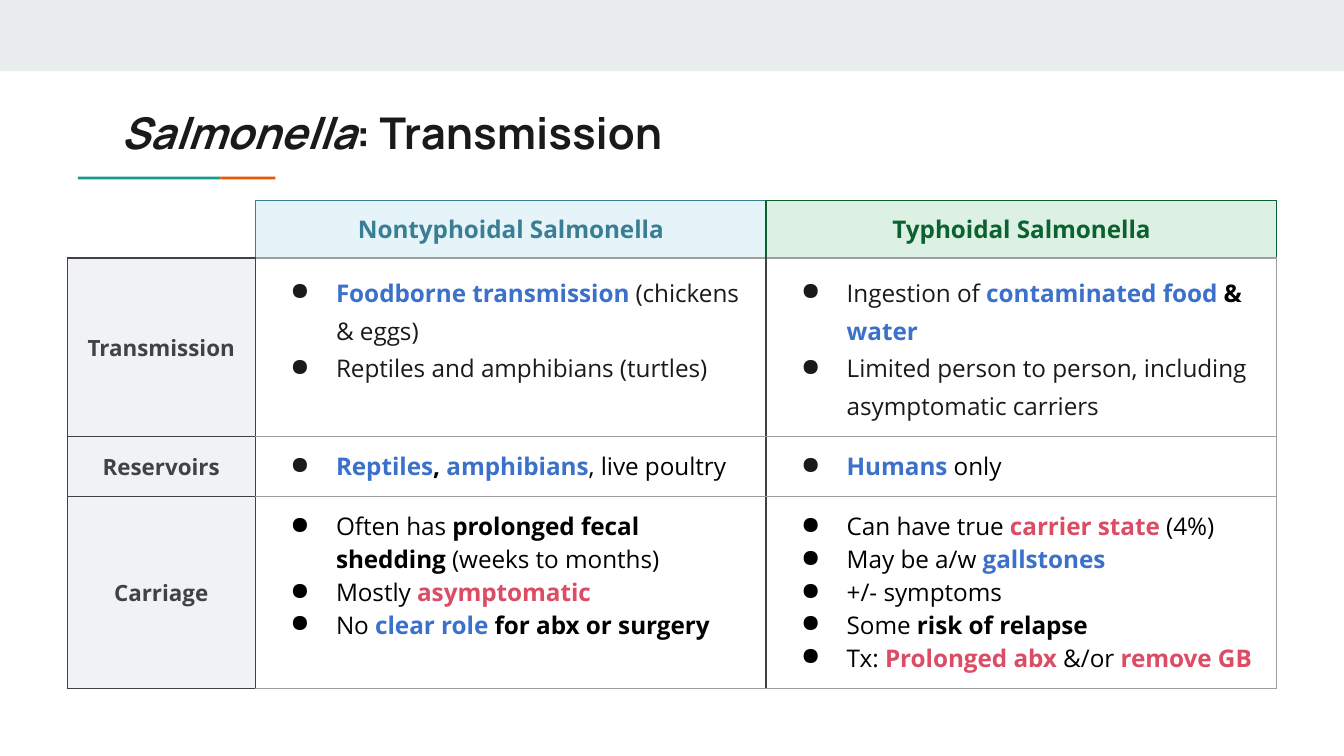
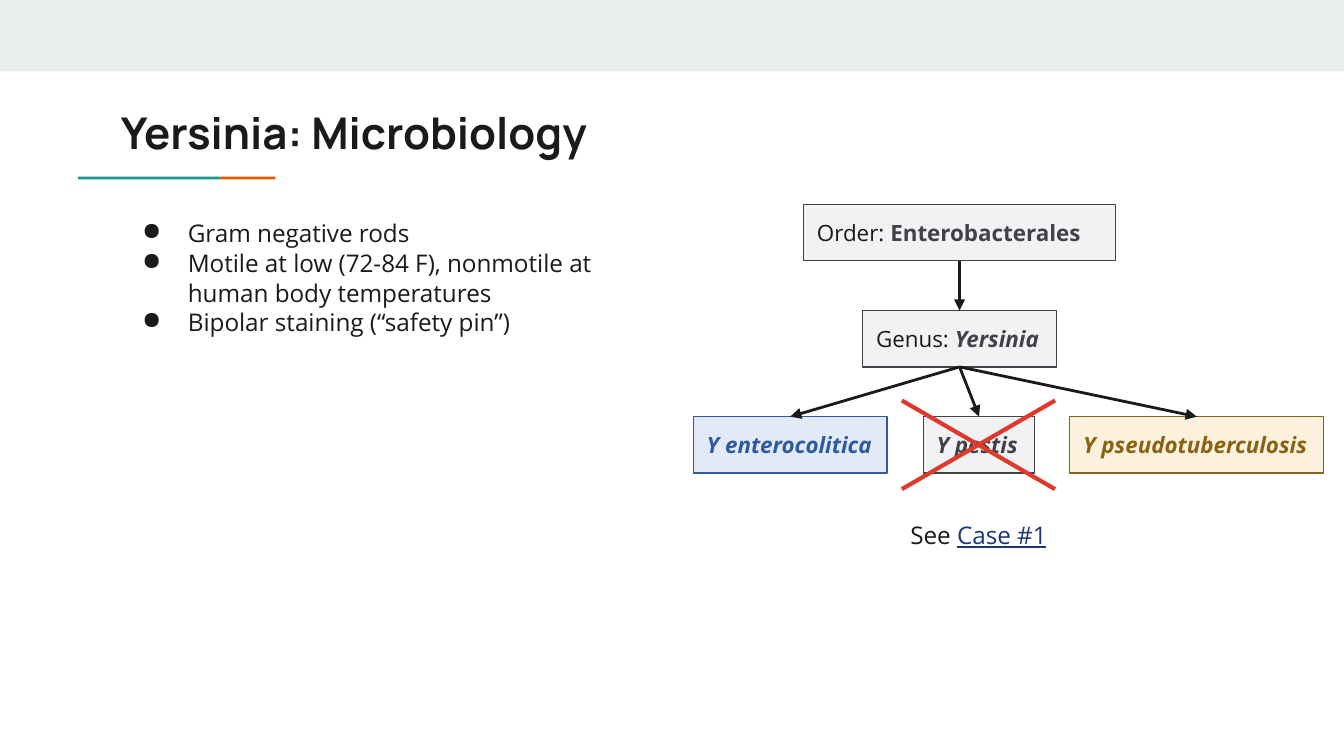
from dataclasses import dataclass

import pptx
import pptx.dml.color
import pptx.enum.shapes
import pptx.enum.text
import pptx.oxml
import pptx.oxml.ns
import pptx.util
from lxml import etree

ALIGN = pptx.enum.text.PP_ALIGN
ANCHOR = pptx.enum.text.MSO_ANCHOR
RECTANGLE = pptx.enum.shapes.MSO_SHAPE.RECTANGLE
STRAIGHT = pptx.enum.shapes.MSO_CONNECTOR.STRAIGHT
TOP_SIDE, BOTTOM_SIDE = 0, 2


@dataclass(frozen=True)
class Theme:
    """Colours, fonts and sizes shared by the slides."""
    ink: str = "1A1A1A"
    black: str = "000000"
    band: str = "E9EDEE"
    teal: str = "1A9988"
    orange: str = "EB5600"
    slate: str = "404247"
    grey_fill: str = "F1F2F3"
    rule: str = "9E9E9E"
    key: str = "3B71CA"
    alert: str = "DC4C64"
    cross: str = "DF382C"
    reference: str = "1C3678"
    cyan: tuple = ("E5F4F8", "3B7E94")
    green: tuple = ("DCF1E4", "0C622E")
    blue: tuple = ("E2EAF7", "2F5AA2")
    amber: tuple = ("FBF1DD", "896110")
    title_font: str = "Manrope"
    body_font: str = "Open Sans"
    title_size: float = 23.4
    body_size: float = 13
    label_size: float = 12
    hairline: float = 0.75


THEME = Theme()
GREY = (THEME.grey_fill, THEME.slate)


def grid(units):
    """Convert grid units, a hundredth of the slide width each, to a length."""
    return pptx.util.Inches(units / 10)


@dataclass(frozen=True)
class Box:
    """A rectangle in grid units."""
    left: float
    top: float
    width: float
    height: float

    def area(self, left, top, width, height):
        """Return a box placed relative to this one."""
        return Box(self.left + left, self.top + top, width, height)

    def lengths(self):
        """Return left, top, width and height as lengths."""
        return [grid(value) for value in (self.left, self.top, self.width, self.height)]


PAGE = Box(0, 0, 100, 56.25)


@dataclass(frozen=True)
class Span:
    """A stretch of text in one style."""
    text: str
    color: str = THEME.ink
    bold: bool = False
    italic: bool = False
    underline: bool = False


def plain(text):
    """Return a black span."""
    return Span(text, THEME.black)


def strong(text):
    """Return a bold black span."""
    return Span(text, THEME.black, True)


def key(text):
    """Return a bold blue span."""
    return Span(text, THEME.key, True)


def alert(text):
    """Return a bold red span."""
    return Span(text, THEME.alert, True)


def rgb(color):
    """Return a colour object for a hexadecimal string."""
    return pptx.dml.color.RGBColor.from_string(color)


def child(parent, tag, **attributes):
    """Append a drawing element to a parent."""
    return etree.SubElement(parent, pptx.oxml.ns.qn(tag), attributes)


def add_bullet(para, color):
    """Give a paragraph a hanging round bullet."""
    properties = para._p.get_or_add_pPr()
    properties.set("marL", str(grid(5)))
    properties.set("indent", str(grid(-3.4)))
    child(child(properties, "a:buClr"), "a:srgbClr", val=color)
    child(properties, "a:buChar", char="●")


def write(frame, lines, size, font=THEME.body_font, align=ALIGN.LEFT,
          bullets=False, spacing=1.0):
    """Fill a text frame with paragraphs made of spans."""
    frame.word_wrap = True
    for index, spans in enumerate(lines):
        para = frame.paragraphs[0] if index == 0 else frame.add_paragraph()
        if bullets:
            add_bullet(para, spans[0].color if spans[0].color == THEME.black else THEME.ink)
        para.alignment = align
        para.line_spacing = spacing
        para.space_before = para.space_after = pptx.util.Pt(0)
        para.font.name = font
        para.font.size = pptx.util.Pt(size)
        for span in spans:
            run = para.add_run()
            run.text = span.text
            run.font.color.rgb = rgb(span.color)
            run.font.bold = span.bold
            run.font.italic = span.italic
            run.font.underline = span.underline


def set_margins(holder):
    """Set equal inner margins on a text frame or table cell."""
    holder.margin_left = holder.margin_right = grid(1)
    holder.margin_top = holder.margin_bottom = grid(1)


def add_rectangle(page, box, fill, line=None):
    """Draw a flat rectangle."""
    shape = page.shapes.add_shape(RECTANGLE, *box.lengths())
    shape.shadow.inherit = False
    shape.fill.solid()
    shape.fill.fore_color.rgb = rgb(fill)
    if line:
        shape.line.color.rgb = rgb(line)
        shape.line.width = pptx.util.Pt(THEME.hairline)
    else:
        shape.line.fill.background()
    return shape


def add_label(page, box, colors, spans, size=THEME.label_size, align=ALIGN.LEFT):
    """Draw an outlined rectangle with one line of text."""
    shape = add_rectangle(page, box, *colors)
    set_margins(shape.text_frame)
    shape.text_frame.vertical_anchor = ANCHOR.MIDDLE
    write(shape.text_frame, [spans], size, align=align)
    return shape


def add_text(page, box, lines, **style):
    """Add a text box."""
    frame = page.shapes.add_textbox(*box.lengths()).text_frame
    set_margins(frame)
    write(frame, lines, THEME.body_size, **style)


def add_line(page, start, end, color, width):
    """Draw a straight line between two grid points."""
    line = page.shapes.add_connector(STRAIGHT, *map(grid, start + end))
    line.line.color.rgb = rgb(color)
    line.line.width = pptx.util.Pt(width)
    child(line._element.spPr, "a:effectLst")
    return line


def add_arrow(page, parent, branch):
    """Join the bottom of one label to the top of another."""
    arrow = add_line(page, (0, 0), (0, 0), THEME.ink, 1.5)
    arrow.begin_connect(parent, BOTTOM_SIDE)
    arrow.end_connect(branch, TOP_SIDE)
    child(arrow.line._get_or_add_ln(), "a:tailEnd", type="triangle")


def add_page(deck, title):
    """Add a slide with the top band, title and accent rule."""
    page = deck.slides.add_slide(deck.slide_layouts[5])
    add_rectangle(page, PAGE.area(0, 0, PAGE.width, 5.3), THEME.band)
    add_rectangle(page, PAGE.area(5.8, 13.15, 10.6, 0.2), THEME.teal)
    add_rectangle(page, PAGE.area(16.4, 13.15, 4.1, 0.2), THEME.orange)
    holder = page.shapes.title
    holder.left, holder.top, holder.width, holder.height = PAGE.area(8, 6.9, 84.1, 5.9).lengths()
    set_margins(holder.text_frame)
    holder.text_frame.vertical_anchor = ANCHOR.TOP
    holder.text_frame.auto_size = pptx.enum.text.MSO_AUTO_SIZE.NONE
    write(holder.text_frame, [title], THEME.title_size, THEME.title_font)
    return page


def set_borders(cell, left, right, top, bottom):
    """Colour the four edges of a cell."""
    properties = cell._tc.get_or_add_tcPr()
    edges = {"a:lnL": left, "a:lnR": right, "a:lnT": top, "a:lnB": bottom}
    for tag, color in edges.items():
        edge = child(properties, tag, w=str(pptx.util.Pt(THEME.hairline)))
        child(child(edge, "a:solidFill"), "a:srgbClr", val=color)


def comparison_table(page, box, headings, rows):
    """Draw two column headings above a table with row labels."""
    label_width, heading_height = 14, 4.3
    column_width = (box.width - label_width) / len(headings)
    for index, (text, colors) in enumerate(headings):
        place = box.area(label_width + index * column_width, 0, column_width, heading_height)
        add_label(page, place, colors, [Span(text, colors[1], True)], THEME.body_size, ALIGN.CENTER)
    body = box.area(0, heading_height, box.width, box.height - heading_height)
    table = page.shapes.add_table(len(rows), len(headings) + 1, *body.lengths()).table
    table.first_row = table.horz_banding = False
    for column, width in zip(table.columns, [label_width] + [column_width] * len(headings)):
        column.width = grid(width)
    for row_index, (name, height, spacing, contents) in enumerate(rows):
        table.rows[row_index].height = grid(height)
        label = table.cell(row_index, 0)
        set_margins(label)
        set_borders(label, *[THEME.slate] * 4)
        label.fill.solid()
        label.fill.fore_color.rgb = rgb(THEME.grey_fill)
        label.vertical_anchor = ANCHOR.MIDDLE
        write(label.text_frame, [[Span(name, THEME.slate, True)]], THEME.label_size, align=ALIGN.CENTER)
        for index, lines in enumerate(contents, 1):
            cell = table.cell(row_index, index)
            set_margins(cell)
            right = THEME.rule if index == len(contents) else THEME.slate
            set_borders(cell, THEME.slate, right, THEME.rule, THEME.rule)
            cell.fill.background()
            write(cell.text_frame, lines, THEME.body_size, bullets=True, spacing=spacing)


def taxonomy_tree(page, box):
    """Draw order, genus and species labels joined by arrows."""
    step, height = 7.9, 4.2
    order = add_label(page, box.area(8.2, 0, 23.2, height), GREY,
                      [Span("Order: "), Span("Enterobacterales", THEME.slate, True)])
    genus = add_label(page, box.area(12.6, step, 14.4, height), GREY,
                      [Span("Genus: "), Span("Yersinia", THEME.slate, True, True)])
    species = [("Y pestis", 17.1, 8.3, GREY),
               ("Y enterocolitica", 0, 14.4, THEME.blue),
               ("Y pseudotuberculosis", 28, 18.9, THEME.amber)]
    branches = [add_label(page, box.area(left, 2 * step, width, height), colors,
                          [Span(name, colors[1], True, True)])
                for name, left, width, colors in species]
    add_arrow(page, order, genus)
    for branch in branches:
        add_arrow(page, genus, branch)
    cross = box.area(15.5, 2 * step - 1.2, 11.4, 6.6)
    right, bottom = cross.left + cross.width, cross.top + cross.height
    add_line(page, (cross.left, cross.top), (right, bottom), THEME.cross, 2.25)
    add_line(page, (right, cross.top), (cross.left, bottom), THEME.cross, 2.25)
    add_text(page, box.area(9.6, 22.5, 23.2, height),
             [[Span("See "), Span("Case #1", THEME.reference, underline=True)]], align=ALIGN.CENTER)


def transmission_slide(deck):
    """Build the slide comparing the two Salmonella groups."""
    page = add_page(deck, [Span("Salmonella", bold=True, italic=True), Span(": Transmission", bold=True)])
    headings = [("Nontyphoidal Salmonella", THEME.cyan), ("Typhoidal Salmonella", THEME.green)]
    rows = [
        ("Transmission", 13.3, 1.15, [
            [[key("Foodborne transmission "), Span("(chickens & eggs)")],
             [Span("Reptiles and amphibians (turtles)")]],
            [[Span("Ingestion of "), key("contaminated food"), strong(" & "), key("water")],
             [Span("Limited person to person, including asymptomatic carriers")]]]),
        ("Reservoirs", 4.4, 1.0, [
            [[key("Reptiles"), strong(", "), key("amphibians"), plain(", live poultry")]],
            [[key("Humans "), plain("only")]]]),
        ("Carriage", 14.3, 1.0, [
            [[plain("Often has "), strong("prolonged fecal shedding"), plain(" (weeks to months)")],
             [plain("Mostly "), alert("asymptomatic")],
             [plain("No "), key("clear role"), strong(" for abx or surgery")]],
            [[plain("Can have true "), alert("carrier state"), plain(" (4%)")],
             [plain("May be a/w "), key("gallstones")],
             [plain("+/- symptoms")],
             [plain("Some "), strong("risk of relapse")],
             [plain("Tx: "), alert("Prolonged abx"), plain(" &/or "), alert("remove GB")]]]),
    ]
    comparison_table(page, PAGE.area(5, 14.9, 90, 36.3), headings, rows)


def microbiology_slide(deck):
    """Build the slide on Yersinia features and taxonomy."""
    page = add_page(deck, [Span("Yersinia: Microbiology", bold=True)])
    facts = ["Gram negative rods",
             "Motile at low (72-84 F), nonmotile at human body temperatures",
             "Bipolar staining (“safety pin”)"]
    add_text(page, PAGE.area(8, 15.2, 41.3, 24.7), [[Span(fact)] for fact in facts],
             bullets=True, spacing=1.02)
    taxonomy_tree(page, PAGE.area(51.6, 15.2, 46.9, 26.7))


def main():
    """Build and save the deck."""
    deck = pptx.Presentation()
    deck.slide_width, deck.slide_height = grid(PAGE.width), grid(PAGE.height)
    transmission_slide(deck)
    microbiology_slide(deck)
    deck.save("out.pptx")


if __name__ == "__main__":
    main()
